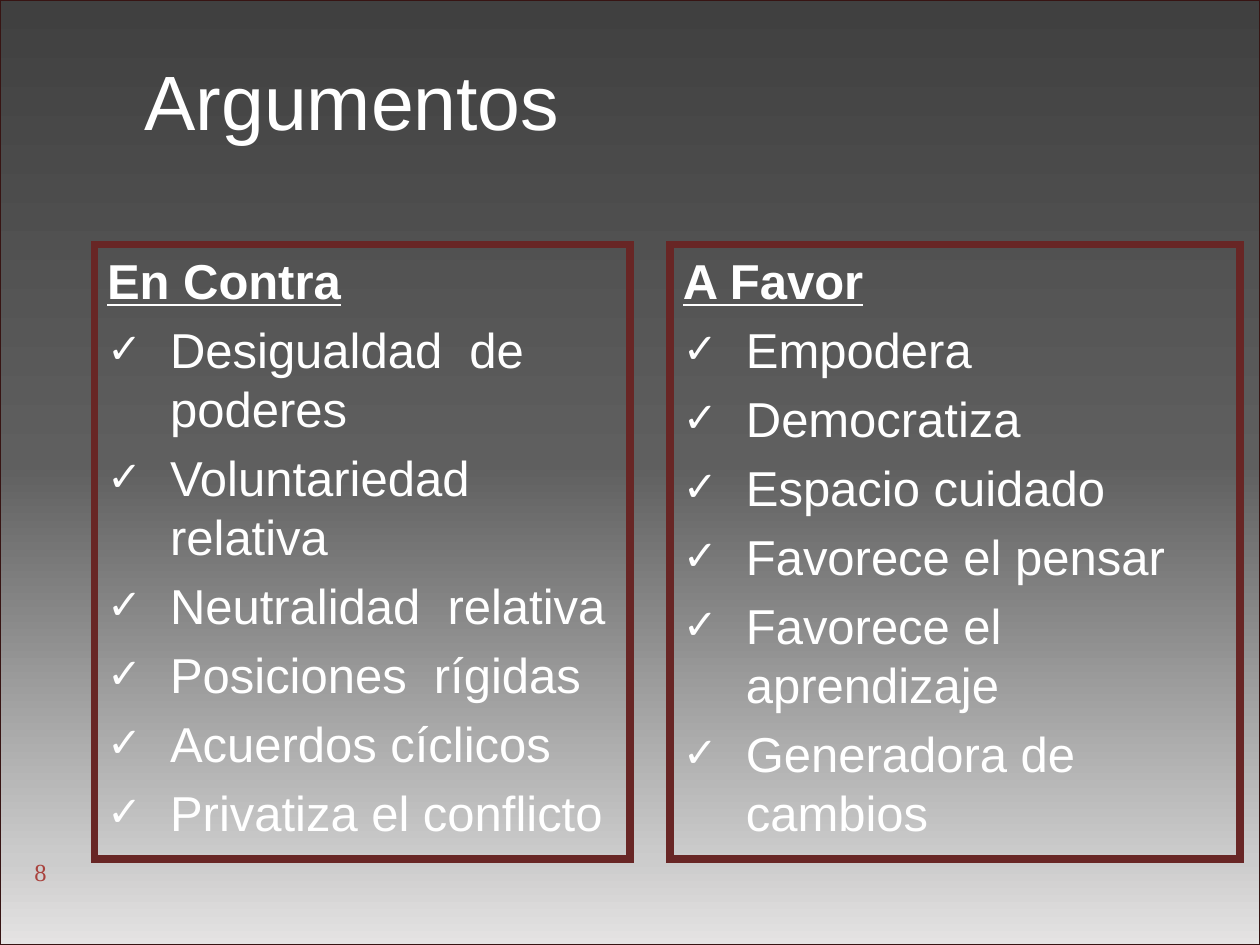
from lxml import etree
from pptx import Presentation
from pptx.dml.color import RGBColor
from pptx.enum.shapes import MSO_SHAPE
from pptx.enum.text import MSO_ANCHOR, MSO_AUTO_SIZE, PP_ALIGN
from pptx.oxml.ns import qn
from pptx.util import Inches, Pt

RECTANGLE, OVAL = MSO_SHAPE.RECTANGLE, MSO_SHAPE.OVAL
TOP, MIDDLE = MSO_ANCHOR.TOP, MSO_ANCHOR.MIDDLE
LEFT, CENTER = PP_ALIGN.LEFT, PP_ALIGN.CENTER
NO_AUTOFIT = MSO_AUTO_SIZE.NONE

WHITE = RGBColor(0xFF, 0xFF, 0xFF)
MAROON = RGBColor(0x68, 0x26, 0x25)
DARK_MAROON = RGBColor(0x37, 0x14, 0x13)
RED = RGBColor(0xA9, 0x42, 0x3D)
BACKDROP_STOPS = [
    (0, RGBColor(0x40, 0x40, 0x40)),
    (49, RGBColor(0x5F, 0x5F, 0x5F)),
    (91, RGBColor(0xCC, 0xCC, 0xCC)),
    (100, RGBColor(0xE5, 0xE3, 0xE3)),
]

# Left, width, heading and points of each column
COLUMNS = [
    (0.75, 4.25, "En Contra", [
        "Desigualdad  de poderes", "Voluntariedad  relativa",
        "Neutralidad  relativa", "Posiciones  rígidas",
        "Acuerdos cíclicos", "Privatiza el conflicto"]),
    (5.32, 4.52, "A Favor", [
        "Empodera", "Democratiza", "Espacio cuidado",
        "Favorece el pensar", "Favorece el aprendizaje",
        "Generadora de cambios"]),
]
HEADING_FONT = {"name": "Arial", "size": Pt(28), "bold": True, "underline": True}
POINT_FONT = {"name": "Arial", "size": Pt(28), "bold": False, "underline": False}


def format_font(font, color, values):
    for name, value in values.items():
        setattr(font, name, value)
    font.color.rgb = color


def set_bullet(paragraph, mark=None):
    hanging = Inches(0.5) if mark else 0
    properties = paragraph._p.get_or_add_pPr()
    properties.set("marL", str(hanging))
    properties.set("indent", str(-hanging))
    if mark is None:
        etree.SubElement(properties, qn("a:buNone"))
        return
    color = etree.SubElement(properties, qn("a:buClr"))
    etree.SubElement(color, qn("a:srgbClr"), val=str(WHITE))
    etree.SubElement(properties, qn("a:buSzPct"), val="85000")
    etree.SubElement(properties, qn("a:buChar"), char=mark)


prs = Presentation()
prs.slide_width, prs.slide_height = Inches(10), Inches(7.5)
slide = prs.slides.add_slide(prs.slide_layouts[3])
title, *column_bodies = slide.placeholders

# Gradient backdrop, behind everything else
backdrop = slide.shapes.add_shape(RECTANGLE, 0, 0, prs.slide_width, prs.slide_height)
backdrop.shadow.inherit = False
backdrop.line.color.rgb = DARK_MAROON
backdrop.line.width = Pt(1)
backdrop.fill.gradient()
backdrop.fill.gradient_angle = 270
stop_list = backdrop._element.spPr.find(".//" + qn("a:gsLst"))
stop_list.clear()
for percent, color in BACKDROP_STOPS:
    stop = etree.SubElement(stop_list, qn("a:gs"), pos=str(percent * 1000))
    etree.SubElement(stop, qn("a:srgbClr"), val=str(color))
slide.shapes._spTree.insert(2, backdrop._element)

# Title
title.left, title.top = Inches(0.2), Inches(0.01)
title.width, title.height = Inches(5.36), Inches(1.61)
title_frame = title.text_frame
title_frame.text = "Argumentos"
title_frame.auto_size = NO_AUTOFIT
title_frame.vertical_anchor = MIDDLE
title_frame.margin_right = Inches(0.27)
title_frame.margin_bottom = Inches(0.1)
title_frame.paragraphs[0].alignment = CENTER
format_font(title_frame.paragraphs[0].font, WHITE, {"name": "Arial", "size": Pt(44)})

# Framed columns of arguments, with square corners
for body, (left, width, heading, points) in zip(column_bodies, COLUMNS):
    body.left, body.top = Inches(left), Inches(1.94)
    body.width, body.height = Inches(width), Inches(4.88)
    body.line.color.rgb = MAROON
    body.line.width = Pt(4.5)
    outline = body._element.spPr.find(qn("a:ln"))
    etree.SubElement(outline, qn("a:miter"), lim="800000")
    frame = body.text_frame
    frame.text = "\n".join([heading, *points])
    frame.auto_size = NO_AUTOFIT
    frame.vertical_anchor = TOP
    for row, paragraph in enumerate(frame.paragraphs):
        paragraph.line_spacing = 1.0
        paragraph.space_before = Pt(5.8 if row else 0)
        set_bullet(paragraph, "✓" if row else None)
        format_font(paragraph.font, WHITE, POINT_FONT if row else HEADING_FONT)

# Slide number
number = slide.shapes.add_shape(OVAL, Inches(0.2), Inches(6.73), Inches(0.5), Inches(0.5))
number.shadow.inherit = False
number.fill.background()
number.line.fill.background()
number_frame = number.text_frame
number_frame.text = "8"
number_frame.vertical_anchor = TOP
for side in ("left", "top", "right", "bottom"):
    setattr(number_frame, f"margin_{side}", 0)
number_frame.paragraphs[0].alignment = LEFT
format_font(number_frame.paragraphs[0].font, RED,
            {"name": "Times New Roman", "size": Pt(14)})

prs.save("out.pptx")
